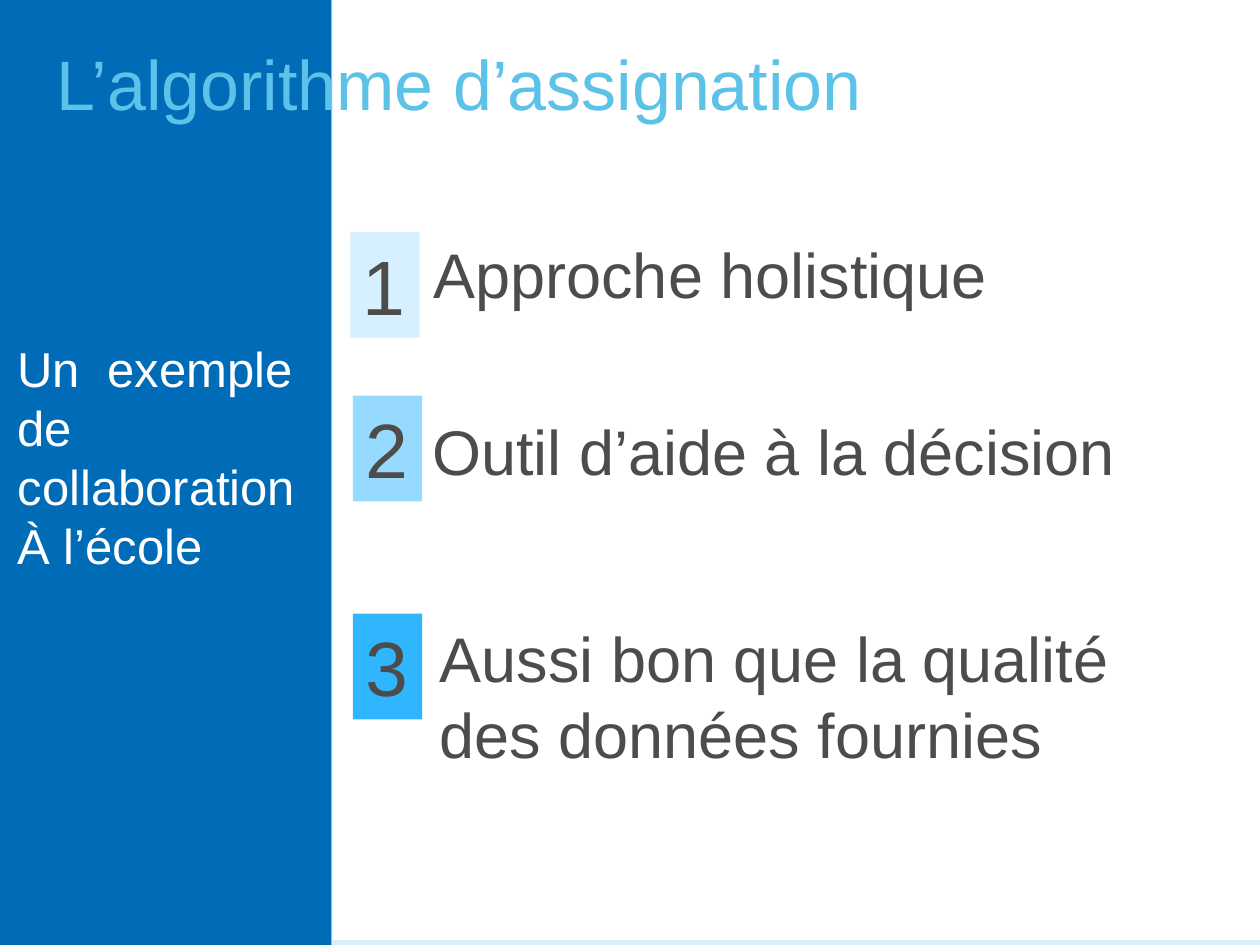
import pptx
import pptx.util
import pptx.dml.color
import pptx.enum.shapes
import pptx.enum.text
import pptx.oxml.ns
import lxml.etree

RGBColor = pptx.dml.color.RGBColor
BACKDROP = RGBColor(0xDB, 0xEE, 0xFC)
SIDEBAR = RGBColor(0x00, 0x6B, 0xB6)
WHITE = RGBColor(0xFF, 0xFF, 0xFF)
HEADING = RGBColor(0x5C, 0xC2, 0xE7)
INK = RGBColor(0x4D, 0x4C, 0x4A)
PALE = RGBColor(0xD6, 0xF0, 0xFF)
LIGHT = RGBColor(0x97, 0xDA, 0xFF)
BRIGHT = RGBColor(0x30, 0xB5, 0xFF)

WIDTH, HEIGHT = 10, 7.5
SPLIT = 0.264 * WIDTH
BADGE_WIDTH, BADGE_HEIGHT = 0.055 * WIDTH, 0.112 * HEIGHT

POINTS = [
    ("1", PALE, "Approche holistique", (2.78, 1.84), (0.56, -0.02, 5.43, 0.71)),
    ("2", LIGHT, "Outil d’aide à la décision", (2.8, 3.14), (0.53, 0.08, 5.83, 0.71)),
    ("3", BRIGHT, "Aussi bon que la qualité des données fournies",
     (2.8, 4.87), (0.59, 0, 6.19, 1.31)),
]


def place(shape, box):
    shape.left, shape.top, shape.width, shape.height = map(pptx.util.Inches, box)


def write(shape, lines, size, color):
    frame = shape.text_frame
    frame.text = "\n".join(lines)
    frame.word_wrap = True
    frame.auto_size = pptx.enum.text.MSO_AUTO_SIZE.NONE
    frame.vertical_anchor = pptx.enum.text.MSO_ANCHOR.TOP
    for paragraph in frame.paragraphs:
        paragraph.alignment = pptx.enum.text.PP_ALIGN.LEFT
        paragraph.line_spacing = 1.0
        paragraph.space_before = pptx.util.Pt(0)
        paragraph.font.name = "Arial"
        paragraph.font.size = pptx.util.Pt(size)
        paragraph.font.bold = False
        paragraph.font.color.rgb = color
        properties = paragraph._p.get_or_add_pPr()
        properties.set("marL", "0")
        properties.set("indent", "0")
        bullet = lxml.etree.Element(pptx.oxml.ns.qn("a:buNone"))
        properties.insert_element_before(bullet, "a:tabLst", "a:defRPr", "a:extLst")


def add_block(slide, box, color):
    block = slide.shapes.add_shape(
        pptx.enum.shapes.MSO_SHAPE.RECTANGLE, *map(pptx.util.Inches, box))
    block.shadow.inherit = False
    block.fill.solid()
    block.fill.fore_color.rgb = color
    block.line.fill.background()
    return block


def fill_placeholder(slide, placeholder, box, lines, size, color):
    place(placeholder, box)
    write(placeholder, lines, size, color)
    slide.shapes._spTree.append(placeholder._element)


def add_panels(slide):
    slide.background.fill.solid()
    slide.background.fill.fore_color.rgb = BACKDROP
    add_block(slide, (0, 0, SPLIT - 0.01, HEIGHT), SIDEBAR)
    add_block(slide, (SPLIT, 0, WIDTH - SPLIT, HEIGHT - 0.04), WHITE)


def add_point(slide, placeholder, number, tint, statement, corner, offset):
    left, top = corner
    across, down, width, height = offset
    badge = add_block(slide, (left, top, BADGE_WIDTH, BADGE_HEIGHT), tint)
    write(badge, [number], 44, INK)
    fill_placeholder(slide, placeholder, (left + across, top + down, width, height),
                     [statement], 36, INK)


def build_slide(deck):
    slide = deck.slides.add_slide(deck.slide_layouts.get_by_name("Comparison"))
    heading, aside, *statements = list(slide.placeholders)
    add_panels(slide)
    fill_placeholder(slide, heading, (0.35, 0.27, 6.66, 1.51),
                     ["L’algorithme d’assignation"], 40, HEADING)
    for statement, point in zip(statements, POINTS):
        add_point(slide, statement, *point)
    fill_placeholder(slide, aside, (0.04, 2.64, 2.45, 2.79),
                     ["Un  exemple de collaboration", "À l’école"], 28, WHITE)


def main():
    deck = pptx.Presentation()
    deck.slide_width = pptx.util.Inches(WIDTH)
    deck.slide_height = pptx.util.Inches(HEIGHT)
    build_slide(deck)
    deck.save("out.pptx")


if __name__ == "__main__":
    main()
